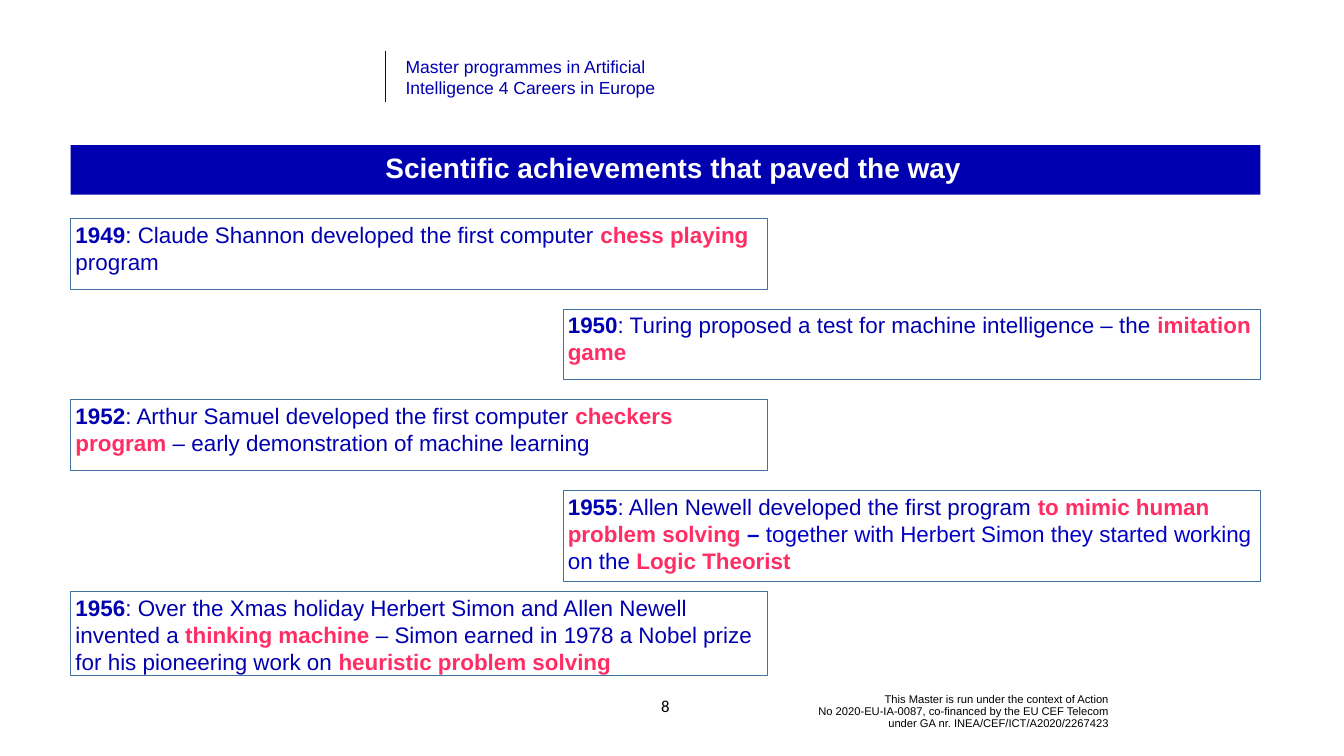
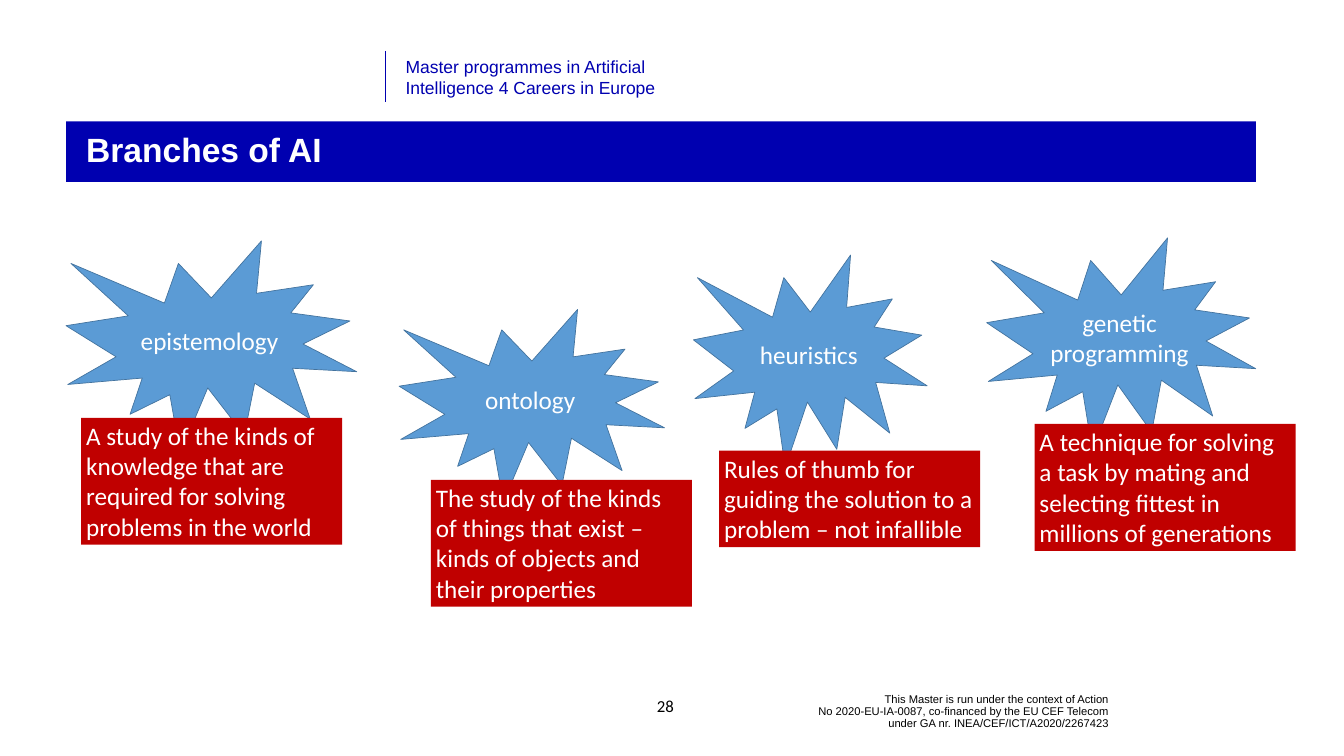
from collections import namedtuple
from lxml import etree
from pptx import Presentation
from pptx.dml.color import RGBColor
from pptx.enum.shapes import MSO_CONNECTOR, MSO_SHAPE
from pptx.enum.text import MSO_ANCHOR as ANCHOR, MSO_AUTO_SIZE as FIT, PP_ALIGN as ALIGN
from pptx.oxml.ns import qn
from pptx.util import Pt

BLUE = RGBColor(0x00, 0x00, 0xB0)
BRIGHT_BLUE = RGBColor(0x01, 0x00, 0xC8)
PINK = RGBColor(0xFF, 0x2D, 0x64)
SKY = RGBColor(0x5B, 0x9B, 0xD5)
STEEL = RGBColor(0x43, 0x73, 0x9E)
RED = RGBColor(0xC0, 0x00, 0x00)
WHITE = RGBColor(0xFF, 0xFF, 0xFF)
BLACK = RGBColor(0x00, 0x00, 0x00)

Box = namedtuple("Box", "x y w h")
SLIDE = Box(0, 0, 1920.24, 1080)

HEADER = {"name": "Arial", "size": Pt(25), "color": BLUE}
FOOTER = {"name": "Arial", "size": Pt(16), "color": BLACK}
NUMBER = {"name": "Calibri", "size": Pt(24), "color": BLACK}
TITLE = {"name": "Arial", "bold": True, "color": WHITE}
LABEL = {"name": "Calibri", "size": Pt(36), "color": WHITE}
PLAIN = {"name": "Arial", "size": Pt(32), "bold": False, "color": BLUE}
YEAR = {**PLAIN, "bold": True}
KEY = {**YEAR, "color": PINK}
DASH = {**YEAR, "color": BRIGHT_BLUE}
BRIGHT = {**PLAIN, "color": BRIGHT_BLUE}

HEADER_TEXT = "Master programmes in Artificial\nIntelligence 4 Careers in Europe"
FOOTER_TEXT = ("This Master is run under the context of Action\n"
               "No 2020-EU-IA-0087, co-financed by the EU CEF Telecom\n"
               "under GA nr. INEA/CEF/ICT/A2020/2267423")

MILESTONES = [
    (100.8, [("1949", YEAR), (": Claude Shannon developed the first computer ", PLAIN),
             ("chess playing ", KEY), ("program", PLAIN)]),
    (100.8, [("1950", YEAR),
             (": Turing proposed a test for machine intelligence – the ", PLAIN),
             ("imitation game", KEY)]),
    (100.8, [("1952", YEAR), (": Arthur Samuel developed the first computer ", PLAIN),
             ("checkers program ", KEY),
             ("– early demonstration of machine learning", PLAIN)]),
    (129.6, [("1955", YEAR), (": Allen Newell developed the first program ", PLAIN),
             ("to mimic human problem solving ", KEY), ("– ", DASH),
             ("together with Herbert Simon they started working on the ", BRIGHT),
             ("Logic Theorist", KEY)]),
    (119.5, [("1956", YEAR),
             (": Over the Xmas holiday Herbert Simon and Allen Newell invented a ", PLAIN),
             ("thinking machine ", KEY),
             ("– Simon earned in 1978 a Nobel prize for his pioneering work on ", PLAIN),
             ("heuristic problem solving", KEY)]),
]

BRANCHES = [
    ("epistemology", Box(0, 4.3, 415.4, 303.8), Box(21.6, 257, 373, 181.4),
     "A study of the kinds of knowledge that are required for solving problems in the world"),
    ("ontology", Box(475.9, 102.2, 379.4, 275), Box(521.3, 345.6, 373, 181.4),
     "The study of the kinds of things that exist – kinds of objects and their properties"),
    ("heuristics", Box(896.4, 24.5, 334.1, 303.8), Box(933.1, 303.8, 373, 138.2),
     "Rules of thumb for guiding the solution to a problem – not infallible"),
    ("genetic programming", Box(1315.4, 0, 384.5, 303.8), Box(1383.8, 265.7, 373, 181.4),
     "A technique for solving a task by mating and selecting fittest in millions of generations"),
]


def inside(box, part):
    """Return the part's box shifted from the outer box's corner."""
    return Box(box.x + part.x, box.y + part.y, part.w, part.h)


def pts(box):
    """Return the box's four lengths in points."""
    return [Pt(v) for v in box]


def write(sp, runs, align=ALIGN.LEFT, anchor=ANCHOR.TOP, spacing=None, fit=FIT.NONE):
    """Fill a shape with one paragraph of formatted runs."""
    tf = sp.text_frame
    frame_format = {"word_wrap": True, "auto_size": fit, "vertical_anchor": anchor}
    for name, value in frame_format.items():
        setattr(tf, name, value)
    p = tf.paragraphs[0]
    p.alignment, p.line_spacing, p.space_before = align, spacing, Pt(0)
    for text, fmt in runs:
        for i, line in enumerate(text.split("\n")):
            if i:
                p.add_line_break()
            r = p.add_run()
            r.text = line
            for name, value in fmt.items():
                if name == "color":
                    r.font.color.rgb = value
                else:
                    setattr(r.font, name, value)


def add_text(slide, box, text, fmt, **layout):
    """Add a text box."""
    write(slide.shapes.add_textbox(*pts(box)), [(text, fmt)], **layout)


def add_block(slide, kind, box, runs, fill=None, line_width=None, **layout):
    """Add a preset shape with optional fill and outline."""
    sp = slide.shapes.add_shape(kind, *pts(box))
    sp.shadow.inherit = False
    if fill is None:
        sp.fill.background()
    else:
        sp.fill.solid()
        sp.fill.fore_color.rgb = fill
    if line_width is None:
        sp.line.fill.background()
    else:
        sp.line.color.rgb = STEEL
        sp.line.width = Pt(line_width)
    write(sp, runs, **layout)


def add_header(slide, box):
    """Add the programme name with the rule on its left."""
    x, top = Pt(box.x), Pt(box.y)
    rule = slide.shapes.add_connector(MSO_CONNECTOR.STRAIGHT, x, top, x, Pt(box.y + box.h))
    rule.line.color.rgb = BLUE
    rule.line.width = Pt(0.5)
    etree.SubElement(rule.element.spPr, qn("a:effectLst"))
    add_text(slide, Box(box.x + 21.6, box.y + 3.6, box.w - 21.6, 67.7),
             HEADER_TEXT, HEADER, fit=FIT.SHAPE_TO_FIT_TEXT)


def add_footer(slide, box, number):
    """Add the slide number and the funding note."""
    add_text(slide, Box(box.x, box.y, 79.9, box.h), number, NUMBER,
             align=ALIGN.CENTER, anchor=ANCHOR.MIDDLE)
    add_text(slide, Box(box.x + 170.6, box.y + 9.4, box.w - 170.6, 54.7), FOOTER_TEXT,
             FOOTER, align=ALIGN.RIGHT, anchor=ANCHOR.MIDDLE, spacing=0.9)


def add_title(slide, box, text, size, align):
    """Turn the title placeholder into the blue band."""
    sp = slide.shapes.title
    sp.left, sp.top, sp.width, sp.height = pts(box)
    sp.fill.solid()
    sp.fill.fore_color.rgb = BLUE
    margins = {"margin_left": 28.8, "margin_right": 7.2, "margin_top": 3.6, "margin_bottom": 3.6}
    for name, value in margins.items():
        setattr(sp.text_frame, name, Pt(value))
    write(sp, [(text, {**TITLE, "size": Pt(size)})], align=align,
          anchor=ANCHOR.MIDDLE, spacing=0.9)


def add_page(prs, number, title, band, size, align):
    """Add a slide with its title band, header and footer."""
    slide = prs.slides.add_slide(prs.slide_layouts[5])
    add_title(slide, band, title, size, align)
    add_header(slide, Box(550.8, 72.7, 480.2, 73.5))
    add_footer(slide, Box(910.8, 979.9, 680.4, 57.6), number)
    return slide


def add_timeline(slide, box, card_width=995.8, pitch=129.6, last_gap=15):
    """Place the milestones in turn at the left and right edges."""
    last = len(MILESTONES) - 1
    for i, (height, runs) in enumerate(MILESTONES):
        x = box.x + (i % 2) * (box.w - card_width)
        y = box.y + i * pitch + (last_gap if i == last else 0)
        add_block(slide, MSO_SHAPE.RECTANGLE, Box(x, y, card_width, height), runs,
                  line_width=0.75)


def add_branches(slide, box):
    """Place the named bursts, then their explanations over them."""
    for name, burst, _, _ in BRANCHES:
        add_block(slide, MSO_SHAPE.EXPLOSION1, inside(box, burst), [(name, LABEL)],
                  fill=SKY, line_width=1, align=ALIGN.CENTER, anchor=ANCHOR.MIDDLE)
    for _, _, note, text in BRANCHES:
        add_block(slide, MSO_SHAPE.RECTANGLE, inside(box, note), [(text, LABEL)],
                  fill=RED, fit=FIT.SHAPE_TO_FIT_TEXT)


def main():
    """Build and save the presentation."""
    prs = Presentation()
    prs.slide_width, prs.slide_height = Pt(SLIDE.w), Pt(SLIDE.h)
    slide = add_page(prs, "8", "Scientific achievements that paved the way",
                     Box(100.8, 207.4, 1700, 70.6), 40, ALIGN.CENTER)
    add_timeline(slide, Box(100.8, 311.8, 1699.2, 653))
    slide = add_page(prs, "28", "Branches of AI",
                     Box(94.3, 173.5, 1700, 86.4), 48, ALIGN.LEFT)
    add_branches(slide, Box(94.3, 339.8, 1756.8, 527))
    prs.save("out.pptx")


if __name__ == "__main__":
    main()
